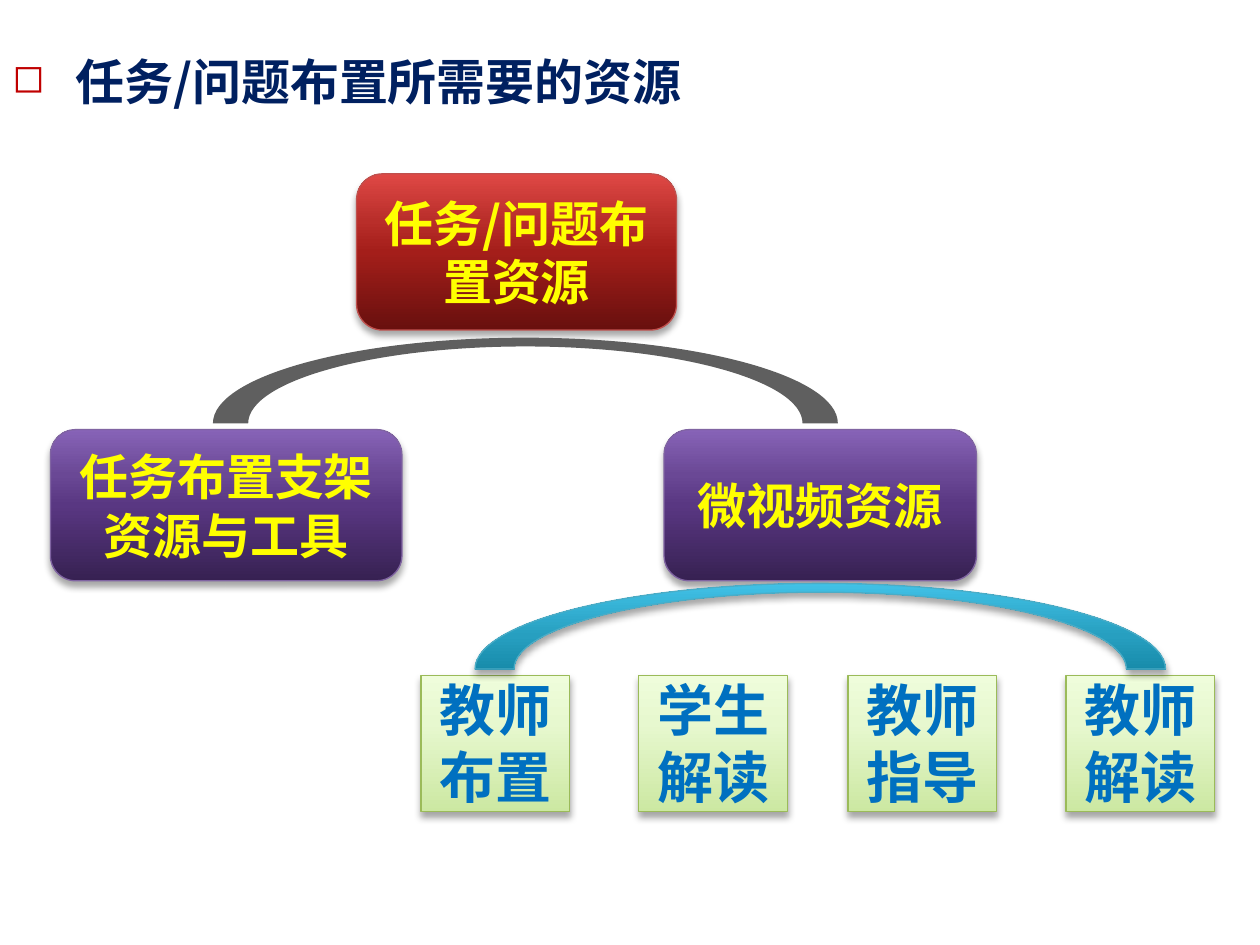
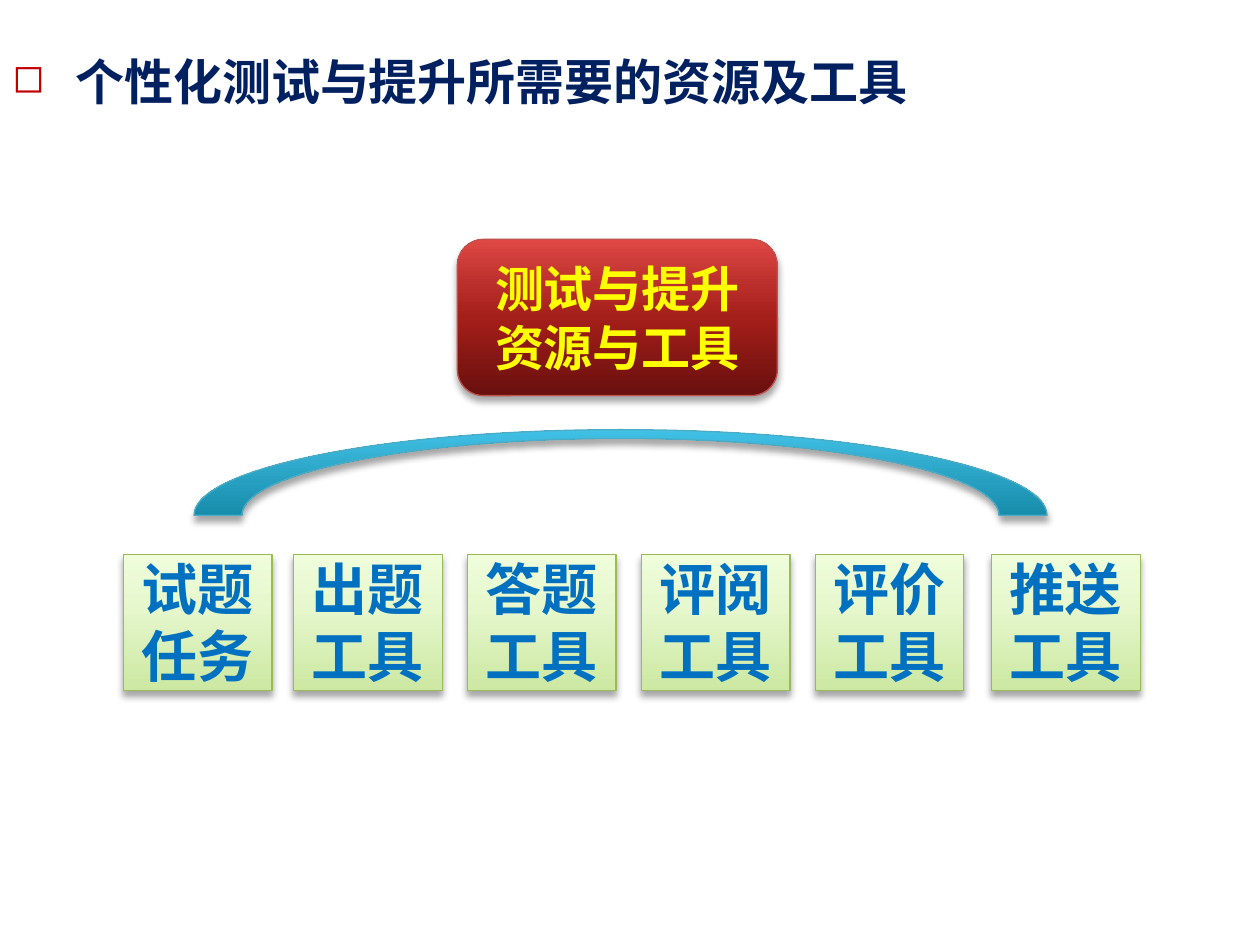
from dataclasses import dataclass
from typing import Optional

from lxml import etree
from pptx import Presentation
from pptx.dml.color import RGBColor
from pptx.enum.shapes import MSO_SHAPE
from pptx.enum.text import MSO_ANCHOR, MSO_AUTO_SIZE, PP_ALIGN
from pptx.oxml.ns import qn
from pptx.util import Inches, Pt

ROUNDED, SQUARE = MSO_SHAPE.ROUNDED_RECTANGLE, MSO_SHAPE.RECTANGLE
CENTER, LEFT = PP_ALIGN.CENTER, PP_ALIGN.LEFT
MIDDLE, TOP = MSO_ANCHOR.MIDDLE, MSO_ANCHOR.TOP
GROW, FIXED = MSO_AUTO_SIZE.SHAPE_TO_FIT_TEXT, MSO_AUTO_SIZE.NONE

FONT = "Noto Sans CJK SC"
NAVY = RGBColor(0x00, 0x20, 0x60)
BLUE = RGBColor(0x00, 0x70, 0xC0)
YELLOW = RGBColor(0xFF, 0xFF, 0x00)
BULLET_RED = RGBColor(0xC0, 0x00, 0x00)
GRAY = RGBColor(0x5F, 0x5F, 0x5F)
SHADOW = RGBColor(0x00, 0x00, 0x00)
RED_EDGE = RGBColor(0xC0, 0x50, 0x4D)
PURPLE_EDGE = RGBColor(0x80, 0x64, 0xA2)
GREEN_EDGE = RGBColor(0x9B, 0xBB, 0x59)
TEAL_EDGE = RGBColor(0x4B, 0xAC, 0xC6)


@dataclass(frozen=True)
class Finish:
    """Gradient stops run from bottom to top; one stop is a flat fill."""
    stops: tuple[tuple[int, RGBColor], ...]
    edge: Optional[RGBColor] = None


@dataclass(frozen=True)
class Topic:
    text: str
    left: float
    top: float
    width: float
    height: float
    finish: Finish


@dataclass(frozen=True)
class Arch:
    left: float
    top: float
    width: float
    foot: float
    finish: Finish


@dataclass(frozen=True)
class Tile:
    text: str
    left: float


@dataclass(frozen=True)
class Page:
    title: str
    title_width: float
    topics: tuple[Topic, ...]
    arches: tuple[Arch, ...]
    tile_top: float
    tiles: tuple[Tile, ...]


RED = Finish(((0, RGBColor(0x68, 0x10, 0x0E)), (50, RGBColor(0xA4, 0x1E, 0x1A)),
              (70, RGBColor(0xB9, 0x2E, 0x2A)), (100, RGBColor(0xDF, 0x48, 0x45))), RED_EDGE)
PURPLE = Finish(((0, RGBColor(0x37, 0x21, 0x52)), (50, RGBColor(0x59, 0x37, 0x82)),
                 (70, RGBColor(0x6A, 0x48, 0x95)), (100, RGBColor(0x87, 0x63, 0xB7))), PURPLE_EDGE)
GREEN = Finish(((0, RGBColor(0xCC, 0xE8, 0xA2)), (65, RGBColor(0xE7, 0xF8, 0xCF)),
                (100, RGBColor(0xEF, 0xFD, 0xDB))), GREEN_EDGE)
TEAL = Finish(((0, RGBColor(0x0B, 0x58, 0x6C)), (50, RGBColor(0x17, 0x8B, 0xAA)),
               (70, RGBColor(0x27, 0x9F, 0xC0)), (100, RGBColor(0x41, 0xC1, 0xE6))), TEAL_EDGE)
FLAT_GRAY = Finish(((0, GRAY),))

TILE_WIDTH, TILE_HEIGHT = 1.18, 1.08
ARCH_FRAME, ARCH_RISE, ARCH_CROWN = 1.38, 0.68, 0.07
ROUNDNESS = 0.55  # handle length of a quarter ellipse

PAGES = (
    Page("任务/问题布置所需要的资源", 7.52,
         (Topic("任务/问题布置资源", 2.83, 1.38, 2.54, 1.24, RED),
          Topic("任务布置支架资源与工具", 0.4, 3.41, 2.79, 1.2, PURPLE),
          Topic("微视频资源", 5.27, 3.41, 2.48, 1.2, PURPLE)),
         (Arch(1.69, 2.68, 4.96, 0.28, FLAT_GRAY),
          Arch(3.77, 4.63, 5.48, 0.31, TEAL)),
         5.36,
         (Tile("教师布置", 3.34), Tile("学生解读", 5.07),
          Tile("教师指导", 6.73), Tile("教师解读", 8.46))),
    Page("个性化测试与提升所需要的资源及工具", 8.31,
         (Topic("测试与提升资源与工具", 3.63, 1.9, 2.54, 1.24, RED),),
         (Arch(1.54, 3.41, 6.77, 0.38, TEAL),),
         4.4,
         (Tile("试题任务", 0.98), Tile("出题工具", 2.33), Tile("答题工具", 3.71),
          Tile("评阅工具", 5.09), Tile("评价工具", 6.47), Tile("推送工具", 7.87))),
)


def add_color(parent, color: RGBColor):
    return etree.SubElement(parent, qn("a:srgbClr"), val=str(color))


def apply_finish(shape, finish: Finish) -> None:
    """Set fill, edge and, for gradient parts, the soft shadow below."""
    shape.shadow.inherit = False
    if finish.edge is None:
        shape.fill.solid()
        shape.fill.fore_color.rgb = finish.stops[0][1]
        shape.line.fill.background()
        return
    shape.fill.gradient()
    shape.fill.gradient_angle = 90
    properties = shape._element.spPr
    stop_list = properties.find(qn("a:gradFill")).find(qn("a:gsLst"))
    for old_stop in list(stop_list):
        stop_list.remove(old_stop)
    for percent, color in finish.stops:
        add_color(etree.SubElement(stop_list, qn("a:gs"), pos=str(percent * 1000)), color)
    shape.line.color.rgb = finish.edge
    shape.line.width = Pt(0.75)
    shadow = etree.SubElement(properties.find(qn("a:effectLst")), qn("a:outerShdw"),
                              blurRad=str(Pt(4)), dist=str(Pt(3)), dir="5400000",
                              rotWithShape="0")
    etree.SubElement(add_color(shadow, SHADOW), qn("a:alpha"), val="35000")


def write_text(shape, text: str, *, size: float, color: RGBColor, align=CENTER,
               anchor=MIDDLE, fit=FIXED, margin: Optional[float] = None):
    """Fill a shape with one bold paragraph and return that paragraph."""
    frame = shape.text_frame
    frame.word_wrap = True
    frame.auto_size = fit
    frame.vertical_anchor = anchor
    if margin is not None:
        frame.margin_left = frame.margin_right = Inches(margin)
        frame.margin_top = frame.margin_bottom = Inches(margin)
    paragraph = frame.paragraphs[0]
    paragraph.alignment = align
    run = paragraph.add_run()
    run.text = text
    run.font.size = Pt(size)
    run.font.bold = True
    run.font.name = FONT
    run.font.color.rgb = color
    etree.SubElement(run._r.get_or_add_rPr(), qn("a:ea"), typeface=FONT)
    return paragraph


def add_title(slide, text: str, width: float) -> None:
    box = slide.shapes.add_textbox(Inches(0), Inches(0.13), Inches(width), Inches(0.81))
    paragraph = write_text(box, text, size=28, color=NAVY, align=LEFT, anchor=TOP, fit=GROW)
    paragraph.line_spacing = 1.5
    settings = paragraph._p.get_or_add_pPr()
    settings.set("marL", str(Inches(0.5)))
    settings.set("indent", str(Inches(-0.5)))
    add_color(etree.SubElement(settings, qn("a:buClr")), BULLET_RED)
    etree.SubElement(settings, qn("a:buSzPct"), val="80000")
    etree.SubElement(settings, qn("a:buChar"), char="◻")


def add_box(slide, kind, left: float, top: float, width: float, height: float,
            finish: Finish):
    box = slide.shapes.add_shape(kind, Inches(left), Inches(top), Inches(width), Inches(height))
    apply_finish(box, finish)
    return box


def add_topic(slide, topic: Topic) -> None:
    box = add_box(slide, ROUNDED, topic.left, topic.top, topic.width, topic.height, topic.finish)
    write_text(box, topic.text, size=28, color=YELLOW)


def add_tile(slide, tile: Tile, top: float) -> None:
    box = add_box(slide, SQUARE, tile.left, top, TILE_WIDTH, TILE_HEIGHT, GREEN)
    write_text(box, tile.text, size=32, color=BLUE, anchor=TOP, fit=GROW, margin=0)


def quarter_curve(start: tuple[float, float], end: tuple[float, float]):
    """Return the three Bezier points of a quarter ellipse between foot and crown."""
    (x0, y0), (x1, y1) = start, end
    dx, dy = ROUNDNESS * (x1 - x0), ROUNDNESS * (y1 - y0)
    if y1 < y0:  # rising from a foot
        return (x0, y0 + dy), (x1 - dx, y1), end
    return (x0 + dx, y0), (x1, y1 - dy), end


def add_arch(slide, arch: Arch) -> None:
    """Draw the band between two half ellipses that share a base line."""
    middle, rise = arch.width / 2, ARCH_RISE
    corners = [(arch.foot, rise), (middle, ARCH_CROWN), (arch.width - arch.foot, rise),
               (arch.width, rise), (middle, 0), (0, rise)]
    placed = [(Inches(arch.left + x), Inches(arch.top + y)) for x, y in corners]
    builder = slide.shapes.build_freeform(*placed[0])
    builder.add_line_segments(placed[1:], close=True)
    band = builder.convert_to_shape()

    # Bend every side but the one along the right foot
    outline = next(band._element.iter(qn("a:path")))
    for index, side in enumerate(outline.findall(qn("a:lnTo"))):
        if index == 2:
            continue
        curve = etree.Element(qn("a:cubicBezTo"))
        for x, y in quarter_curve(corners[index], corners[index + 1]):
            etree.SubElement(curve, qn("a:pt"), x=str(Inches(x)), y=str(Inches(y)))
        outline.replace(side, curve)

    # The frame holds the full ellipse, of which the band is the upper half
    band.height = Inches(ARCH_FRAME)
    outline.set("h", str(Inches(ARCH_FRAME)))
    apply_finish(band, arch.finish)


def main() -> None:
    deck = Presentation()
    deck.slide_width, deck.slide_height = Inches(10), Inches(7.5)
    for page in PAGES:
        slide = deck.slides.add_slide(deck.slide_layouts[6])
        add_title(slide, page.title, page.title_width)
        for topic in page.topics:
            add_topic(slide, topic)
        for tile in page.tiles:
            add_tile(slide, tile, page.tile_top)
        for arch in page.arches:
            add_arch(slide, arch)
    deck.save("out.pptx")


if __name__ == "__main__":
    main()
